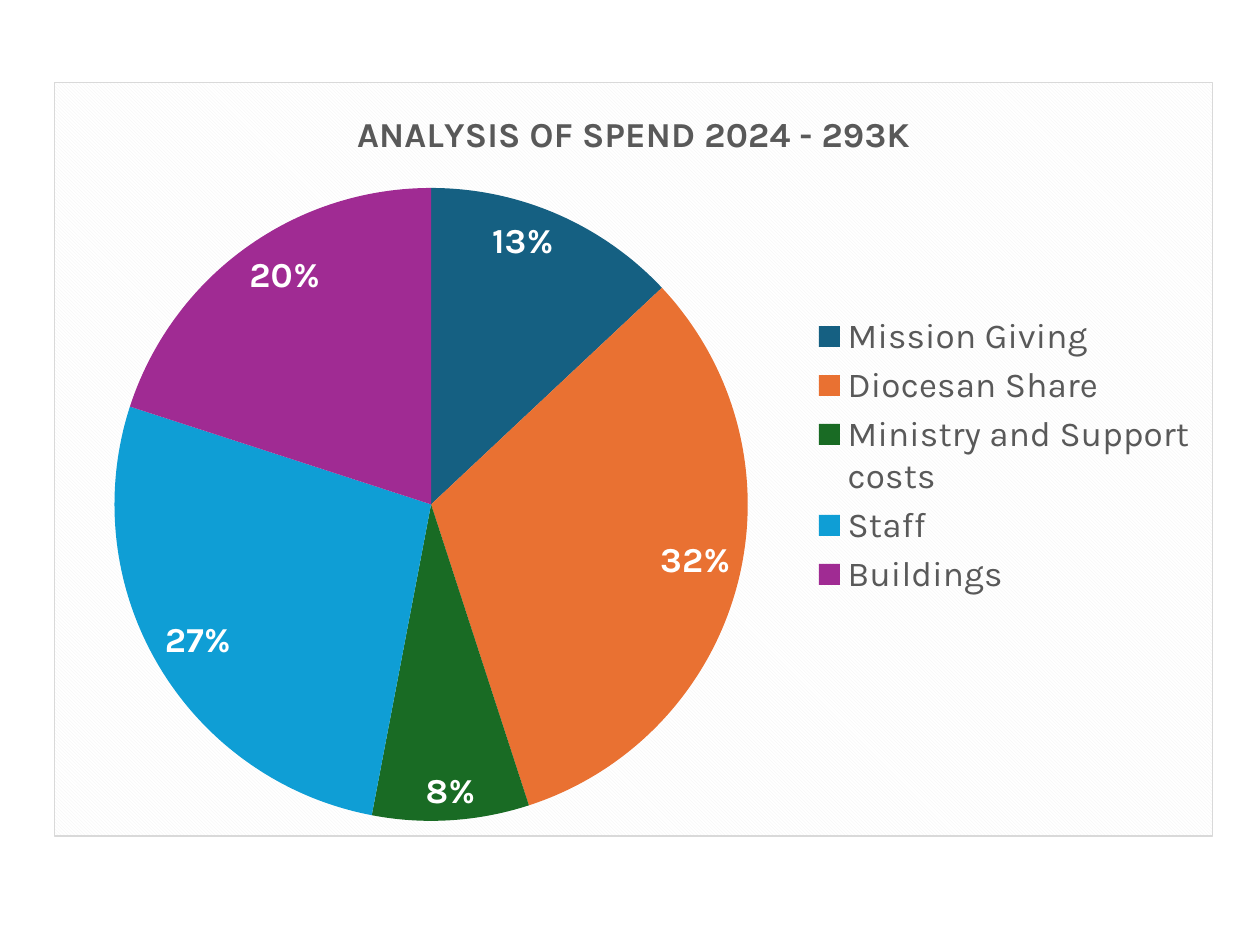
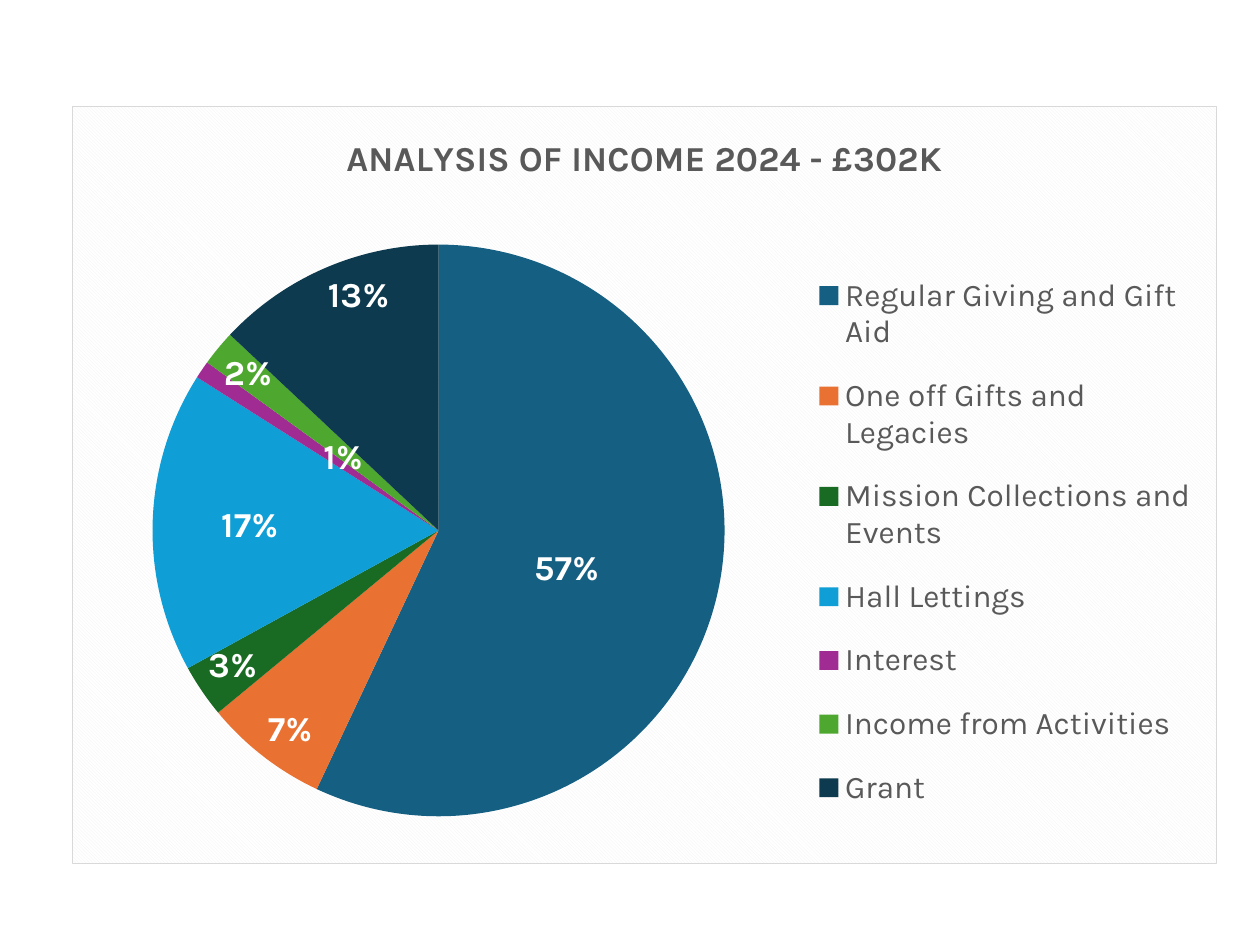
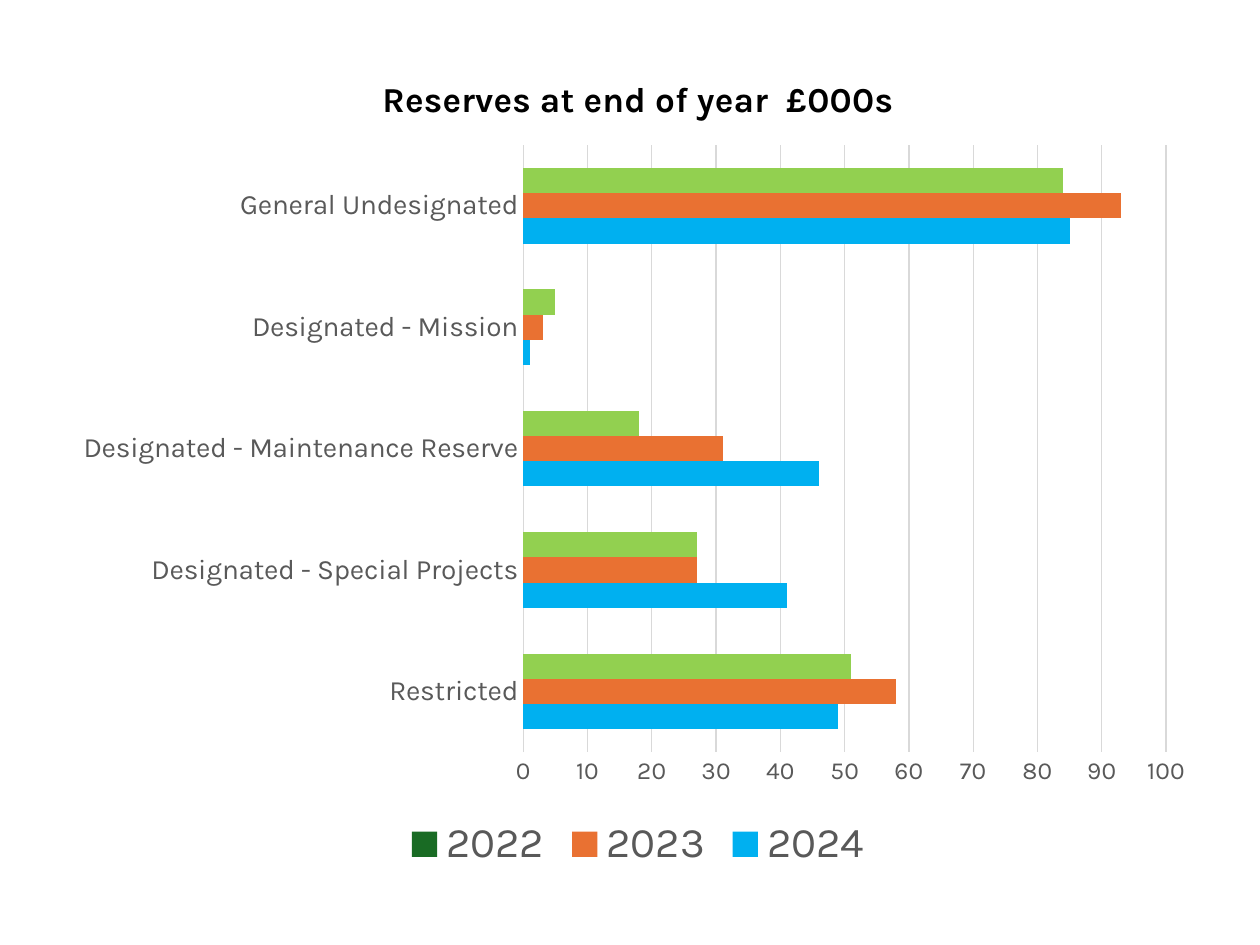
from dataclasses import dataclass

from pptx import Presentation
from pptx.chart.data import CategoryChartData
from pptx.dml.color import RGBColor as RGB
from pptx.enum.chart import XL_CHART_TYPE as ChartType
from pptx.enum.chart import XL_LABEL_POSITION as LabelPos
from pptx.enum.chart import XL_LEGEND_POSITION as LegendPos
from pptx.enum.chart import XL_TICK_MARK as TickMark
from pptx.oxml import parse_xml
from pptx.oxml.ns import nsdecls, qn
from pptx.util import Inches, Pt


@dataclass(frozen=True)
class Theme:
    font: str = "Karla"
    grey: RGB = RGB.from_string("595959")
    rule: RGB = RGB.from_string("D9D9D9")
    white: RGB = RGB.from_string("FFFFFF")
    black: RGB = RGB.from_string("000000")
    blue: RGB = RGB.from_string("00B0F0")
    orange: RGB = RGB.from_string("E97132")
    green: RGB = RGB.from_string("196B24")
    lime: RGB = RGB.from_string("92D050")
    slices: tuple = ("156082", "E97132", "196B24", "0F9ED5", "A02B93", "4EA72E", "0D3A4E")
    title: Pt = Pt(20)
    label: Pt = Pt(20)
    category: Pt = Pt(16)
    value: Pt = Pt(14)
    line: Pt = Pt(0.75)


T = Theme()
FRAME = f"""<c:spPr {nsdecls("c", "a")}>
  <a:pattFill prst="dkDnDiag"><a:fgClr><a:srgbClr val="F2F2F2"/></a:fgClr>
    <a:bgClr><a:srgbClr val="FFFFFF"/></a:bgClr></a:pattFill>
  <a:ln w="9525"><a:solidFill><a:srgbClr val="{T.rule}"/></a:solidFill></a:ln>
</c:spPr>"""


def set_layout(parent, index, x, y, w=None, h=None):
    """Place a chart part by fractions of the chart; without a size, shift it."""
    for old in parent.findall(qn("c:layout")):
        parent.remove(old)
    parts = [("x", x), ("y", y)]
    if w is not None:
        parts = [("xMode", "edge"), ("yMode", "edge"), *parts, ("w", w), ("h", h)]
        if parent.tag == qn("c:plotArea"):
            parts.insert(0, ("layoutTarget", "inner"))
    body = "".join(f'<c:{name} val="{value}"/>' for name, value in parts)
    parent.insert(index, parse_xml(
        f'<c:layout {nsdecls("c")}><c:manualLayout>{body}</c:manualLayout></c:layout>'))


def add_titled_chart(kind, box, cats, series, title, title_color, legend_pos, legend_size, plot_box):
    """Add a slide holding one chart with the shared title, legend and font."""
    data = CategoryChartData()
    data.categories = cats
    for name, values in series:
        data.add_series(name, values)
    slide = prs.slides.add_slide(prs.slide_layouts[6])
    chart = slide.shapes.add_chart(kind, *map(Inches, box), data).chart
    chart.font.name, chart.font.size = T.font, Pt(10)
    chart.has_title = True
    p = chart.chart_title.text_frame.paragraphs[0]
    p.text = title
    p.font.name, p.font.size, p.font.bold = T.font, T.title, True
    p.font.color.rgb = title_color
    chart.has_legend = True
    legend = chart.legend
    legend.position, legend.include_in_layout = legend_pos, False
    legend.font.name, legend.font.size = T.font, Pt(legend_size)
    legend.font.color.rgb = T.grey
    set_layout(chart._chartSpace.chart.plotArea, 0, *plot_box)
    return chart


prs = Presentation()
prs.slide_width, prs.slide_height = Inches(10), Inches(7.5)

# Each shift moves a crowded label from the middle of its slice
pies = [
    dict(title="ANALYSIS OF SPEND 2024 - 293K", box=(0.43, 0.65, 9.2, 5.99),
         slices={"Mission Giving": 13, "Diocesan Share": 32, "Ministry and Support costs": 8,
                 "Staff": 27, "Buildings": 20},
         plot=(0.05, 0.14, 0.55, 0.84), legend=(0.65, 0.3, 0.34, 0.39), size=20, shifts={}),
    dict(title="ANALYSIS OF INCOME 2024 - £302K", box=(0.57, 0.84, 9.09, 6.02),
         slices={"Regular Giving and Gift Aid": 57, "One off Gifts and Legacies": 7,
                 "Mission Collections and Events": 3, "Hall Lettings": 17, "Interest": 1,
                 "Income from Activities": 2, "Grant": 13},
         plot=(0.07, 0.18, 0.5, 0.76), legend=(0.65, 0.19, 0.33, 0.77), size=18,
         shifts={0: (-0.01, 0.01), 3: (-0.04, 0), 4: (0.02, 0.01)}),
]
for pie in pies:
    chart = add_titled_chart(
        ChartType.PIE, pie["box"], list(pie["slices"]), [("Series 1", list(pie["slices"].values()))],
        pie["title"], T.grey, LegendPos.RIGHT, pie["size"], pie["plot"])
    chart._chartSpace.chart.addnext(parse_xml(FRAME))
    set_layout(chart.legend._element, 1, *pie["legend"])
    plot = chart.plots[0]
    plot.vary_by_categories = True
    points = plot.series[0].points
    for i, color in enumerate(T.slices[:len(pie["slices"])]):
        points[i].format.fill.solid()
        points[i].format.fill.fore_color.rgb = RGB.from_string(color)
    labels = plot.series[0].data_labels
    labels.show_percentage, labels.show_value = True, False
    labels.number_format, labels.number_format_is_linked = "0%", False
    labels.position = LabelPos.INSIDE_END
    fonts = [labels.font]
    for i, shift in pie["shifts"].items():
        label = points[i].data_label
        label.position = LabelPos.CENTER
        fonts.append(label.font)
        dLbl = label._dLbl
        dLbl.find(qn("c:showVal")).set("val", "0")
        dLbl.find(qn("c:showPercent")).set("val", "1")
        set_layout(dLbl, 1, *shift)
    for font in fonts:
        font.name, font.size, font.bold = T.font, T.label, True
        font.color.rgb = T.white

reserves = [
    ("2024", (49000, 41000, 46000, 1000, 85000), T.blue),
    ("2023", (58000, 27000, 31000, 3000, 93000), T.orange),
    ("2022", (51000, 27000, 18000, 5000, 84000), T.green),
]
funds = ["Restricted", "Designated - Special Projects", "Designated - Maintenance Reserve",
         "Designated - Mission", "General Undesignated"]
chart = add_titled_chart(
    ChartType.BAR_CLUSTERED, (0.51, 0.36, 9.11, 6.6), funds, [row[:2] for row in reserves],
    "Reserves at end of year  £000s", T.black, LegendPos.BOTTOM, 24, (0.4, 0.12, 0.56, 0.73))
plot = chart.plots[0]
plot.gap_width, plot.vary_by_categories = 182, False
for series, (_, _, color) in zip(plot.series, reserves):
    series.format.fill.solid()
    series.format.fill.fore_color.rgb = color
for i in range(len(funds)):
    fill = plot.series[2].points[i].format.fill
    fill.solid()
    fill.fore_color.rgb = T.lime

cat_axis, val_axis = chart.category_axis, chart.value_axis
for axis, size in ((cat_axis, T.category), (val_axis, T.value)):
    axis.major_tick_mark = axis.minor_tick_mark = TickMark.NONE
    font = axis.tick_labels.font
    font.name, font.size = T.font, size
    font.color.rgb = T.grey
val_axis.minimum_scale, val_axis.maximum_scale, val_axis.major_unit = 0, 100000, 10000
val_axis.tick_labels.number_format = "#,##0,"
val_axis.tick_labels.number_format_is_linked = False
val_axis.format.line.fill.background()
val_axis.has_major_gridlines = True
for line in (cat_axis.format.line, val_axis.major_gridlines.format.line):
    line.color.rgb, line.width = T.rule, T.line

prs.save("out.pptx")
